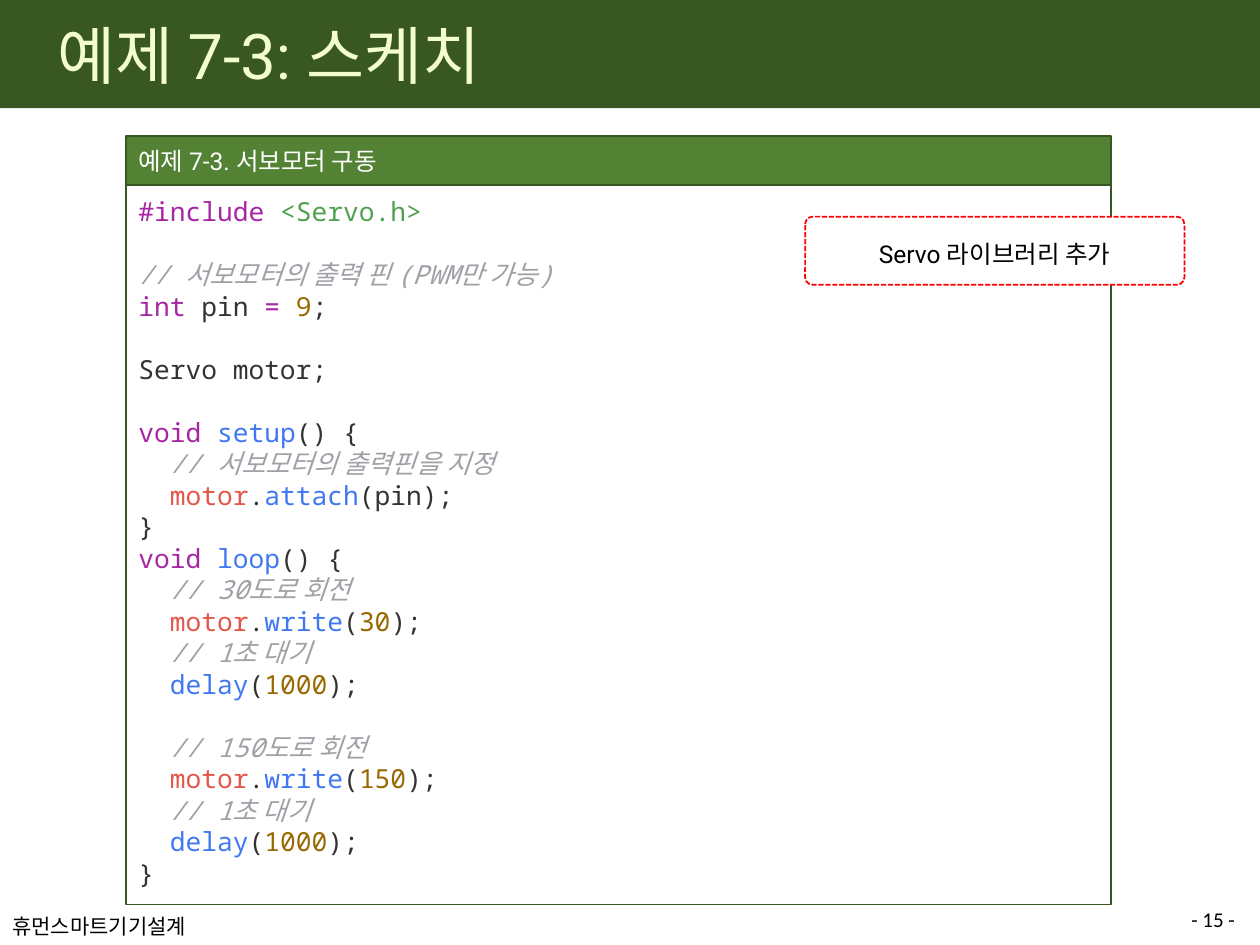
import pptx
import pptx.dml.color
import pptx.enum.dml
import pptx.enum.shapes
import pptx.enum.text
import pptx.util

Inches = pptx.util.Inches
Pt = pptx.util.Pt
SHAPES = pptx.enum.shapes.MSO_SHAPE
ANCHOR = pptx.enum.text.MSO_ANCHOR
ALIGN = pptx.enum.text.PP_ALIGN


def color(value):
    return pptx.dml.color.RGBColor.from_string(value)


def write(para, text, fill, **formats):
    span = para.add_run()
    span.text = text
    span.font.color.rgb = color(fill)
    for name, value in formats.items():
        setattr(span.font, name, value)


deck = pptx.Presentation()
deck.slide_width, deck.slide_height = Inches(10), Inches(7.5)
page = deck.slides.add_slide(deck.slide_layouts[6])

boxes = {}
for name, kind, area, fill, line in [
    ("banner", SHAPES.RECTANGLE, (0, 0, 10, 0.86), "385723", None),
    ("code", SHAPES.RECTANGLE, (1, 1.47, 7.82, 5.71), "FFFFFF", "385723"),
    ("heading", SHAPES.RECTANGLE, (1, 1.08, 7.82, 0.39), "548235", "385723"),
    ("callout", SHAPES.ROUNDED_RECTANGLE, (6.39, 1.72, 3.01, 0.54), "FFFFFF", "FF0000"),
    ("course", None, (0, 7.2, 1.59, 0.3), None, None),
    ("title", None, (0.36, 0.12, 9.3, 0.7), None, None),
    ("number", None, (8.9, 7.15, 1, 0.29), None, None),
]:
    place = [Inches(length) for length in area]
    if kind is None:
        box = page.shapes.add_textbox(*place)
    else:
        box = page.shapes.add_shape(kind, *place)
        box.shadow.inherit = False
        box.fill.solid()
        box.fill.fore_color.rgb = color(fill)
        if line:
            box.line.color.rgb = color(line)
            box.line.width = Pt(1)
        else:
            box.line.fill.background()
    boxes[name] = box

boxes["callout"].adjustments[0] = 0.11
boxes["callout"].line.dash_style = pptx.enum.dml.MSO_LINE.SQUARE_DOT

for name, text, size, font, fill, align, spacing, frame_format in [
    ("course", "휴먼스마트기기설계", 12, "Roboto", "000000", ALIGN.LEFT, 1,
     {"word_wrap": False, "vertical_anchor": ANCHOR.TOP}),
    ("title", "예제 7-3: 스케치", 36, "Roboto", "F3FECC", ALIGN.LEFT, 0.9, {}),
    ("number", "- 15 -", 12, "Calibri", "000000", ALIGN.RIGHT, 1, {}),
    ("heading", "예제 7-3. 서보모터 구동", 14, "Roboto", "FFFFFF", ALIGN.LEFT, 1,
     {"margin_top": Inches(0.08), "margin_bottom": Inches(0.08)}),
    ("callout", "Servo 라이브러리 추가", 14, "Roboto", "000000", ALIGN.CENTER, 1.2, {}),
]:
    frame = boxes[name].text_frame
    settings = {"word_wrap": True, "vertical_anchor": ANCHOR.MIDDLE, **frame_format}
    for key, value in settings.items():
        setattr(frame, key, value)
    para = frame.paragraphs[0]
    para.alignment = align
    para.line_spacing = spacing
    write(para, text, fill, size=Pt(size), name=font)

syntax = {
    "keyword": "A626A4", "header": "50A14F", "comment": "A0A1A7", "plain": "333333",
    "number": "986801", "function": "4078F2", "object": "E45649",
}
close = [("plain", "}")]
rows = [
    (0, 0, [("keyword", "#include "), ("header", "<Servo.h>")]),
    (0, 1, [("comment", "// 서보모터의 출력 핀 (PWM만 가능)")]),
    (0, 0, [("keyword", "int"), ("plain", " pin "), ("keyword", "= "),
            ("number", "9"), ("plain", ";")]),
    (0, 1, [("plain", "Servo motor;")]),
    (0, 1, [("keyword", "void "), ("function", "setup"), ("plain", "() {")]),
    (1, 0, [("comment", "// 서보모터의 출력핀을 지정")]),
    (1, 0, [("object", "motor"), ("plain", "."), ("function", "attach"),
            ("plain", "(pin);")]),
    (0, 0, close),
    (0, 0, [("keyword", "void "), ("function", "loop"), ("plain", "() {")]),
]
for gap, angle in enumerate(["30", "150"]):
    rows += [
        (1, gap, [("comment", f"// {angle}도로 회전")]),
        (1, 0, [("object", "motor"), ("plain", "."), ("function", "write"),
                ("plain", "("), ("number", angle), ("plain", ");")]),
        (1, 0, [("comment", "// 1초 대기")]),
        (1, 0, [("function", "delay"), ("plain", "("), ("number", "1000"),
                ("plain", ");")]),
    ]
rows.append((0, 0, close))

frame = boxes["code"].text_frame
for key, value in {
    "word_wrap": True, "vertical_anchor": ANCHOR.TOP,
    "margin_top": Inches(0.08), "margin_bottom": Inches(0.08),
}.items():
    setattr(frame, key, value)
for index, (level, gap, tokens) in enumerate(rows):
    para = frame.add_paragraph() if index else frame.paragraphs[0]
    para.alignment = ALIGN.LEFT
    para.space_before = Pt(18 * gap)
    para._p.get_or_add_pPr().set("marL", str(Inches(0.25 * level)))
    for kind, text in tokens:
        write(para, text, syntax[kind], size=Pt(15), name="Noto Sans Mono",
              italic=kind == "comment")

deck.save("out.pptx")
